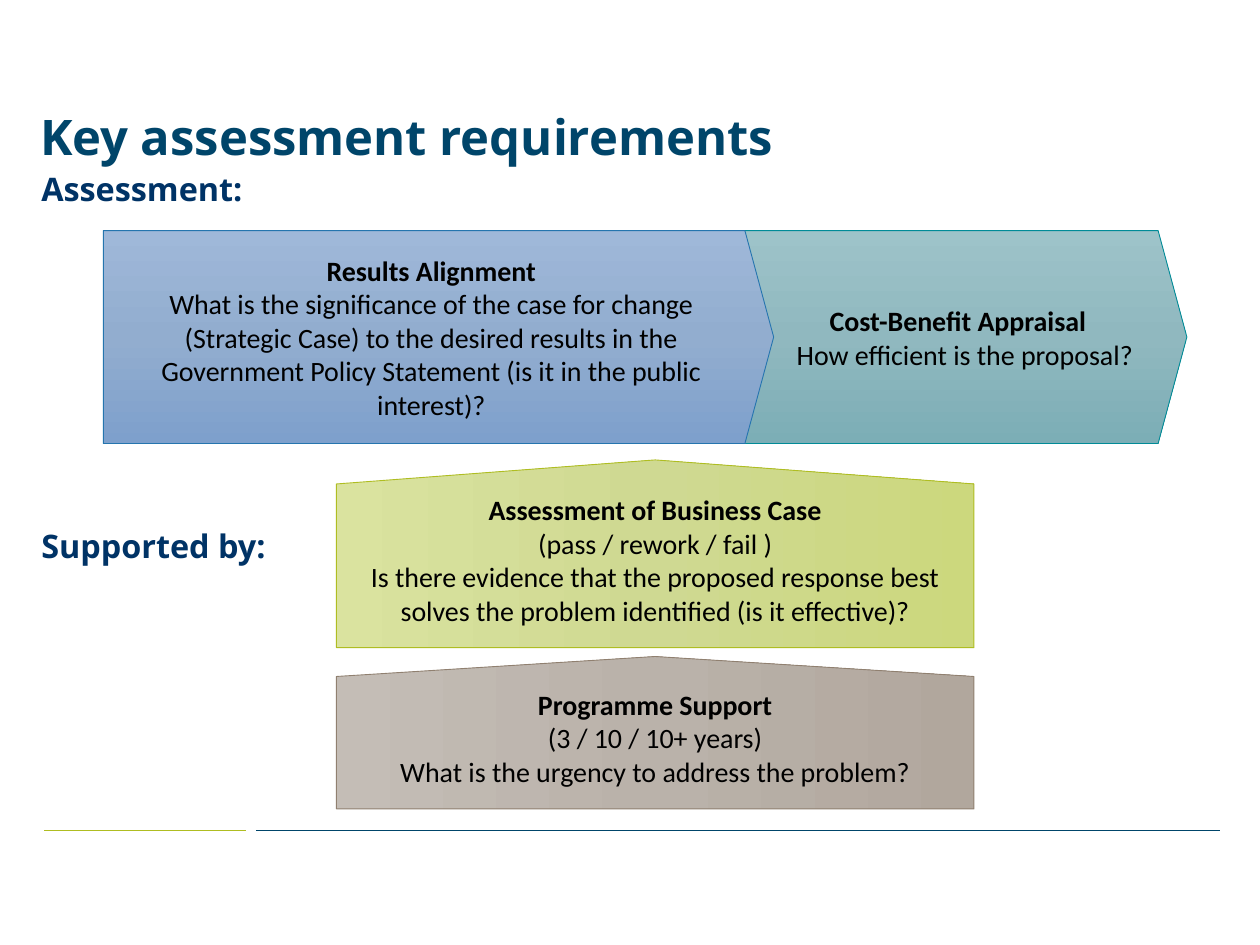
from lxml.etree import SubElement
from pptx import Presentation
from pptx.dml.color import RGBColor
from pptx.enum.shapes import MSO_CONNECTOR, MSO_SHAPE
from pptx.enum.text import MSO_ANCHOR, PP_ALIGN
from pptx.oxml.ns import qn
from pptx.util import Inches, Pt

COLORS = {
    "title": "00456A",
    "label": "003366",
    "body": "000000",
    "rule_green": "AFBD21",
    "teal_line": "008B97",
    "blue_line": "2575AE",
    "green_line": "AFBD22",
    "taupe_line": "908070",
}
GRADIENTS = {
    "teal": ("9DC3C9", "90B8BF", "7CAEB6"),
    "blue": ("9FB8D9", "92ADCF", "7EA0CC"),
    "green": ("DAE39F", "CFD992", "CCD87D"),
    "taupe": ("C4BDB6", "BAB2AA", "B1A79D"),
}


def rgb(name):
    return RGBColor.from_string(COLORS[name])


def format_font(font, name, size, color, bold):
    font.name = name
    font.size = Pt(size)
    font.color.rgb = rgb(color)
    font.bold = bold


def add_heading(slide, text, box, size, color, line_spacing, anchor):
    shape = slide.shapes.add_textbox(*map(Inches, box))
    text_frame = shape.text_frame
    text_frame.word_wrap = True
    text_frame.vertical_anchor = anchor
    text_frame.text = text
    paragraph = text_frame.paragraphs[0]
    paragraph.line_spacing = line_spacing
    format_font(paragraph.runs[0].font, "Open Sans", size, color, True)


def add_rule(slide, left, right, color):
    top = Inches(6.59)
    connector = slide.shapes.add_connector(
        MSO_CONNECTOR.STRAIGHT, Inches(left), top, Inches(right), top)
    connector.line.color.rgb = rgb(color)
    connector.line.width = Pt(0.75)
    SubElement(connector._element.spPr, qn("a:effectLst"))


def fill_gradient(shape, colors):
    shape.fill.gradient()
    shape.fill.gradient_angle = 270
    stops = shape._element.spPr.find(qn("a:gradFill")).find(qn("a:gsLst"))
    for stop in list(stops):
        stops.remove(stop)
    for position, color in zip((0, 50000, 100000), colors):
        stop = SubElement(stops, qn("a:gs"), pos=str(position))
        SubElement(stop, qn("a:srgbClr"), val=color)


def add_pentagon(slide, box, point, theme, lines, upward=False, margins=()):
    left, top, width, height = box
    if upward:
        left += (width - height) / 2
        top += (height - width) / 2
        width, height = height, width
    shape = slide.shapes.add_shape(
        MSO_SHAPE.PENTAGON, *map(Inches, (left, top, width, height)))
    shape.shadow.inherit = False
    shape.adjustments[0] = point
    fill_gradient(shape, GRADIENTS[theme])
    shape.line.color.rgb = rgb(f"{theme}_line")
    shape.line.width = Pt(0.5)
    text_frame = shape.text_frame
    text_frame.word_wrap = True
    text_frame.vertical_anchor = MSO_ANCHOR.MIDDLE
    if upward:
        shape.rotation = 270
        text_frame._txBody.bodyPr.set("vert", "vert")
    text_frame.text = "\n".join(lines)
    for index, paragraph in enumerate(text_frame.paragraphs):
        paragraph.alignment = PP_ALIGN.CENTER
        format_font(paragraph.runs[0].font, "Calibri", 16, "body", index == 0)
    for paragraph, margin in zip(text_frame.paragraphs, margins):
        paragraph._p.get_or_add_pPr().set("marL", str(Inches(margin)))


def main():
    presentation = Presentation()
    presentation.slide_width = Inches(10)
    presentation.slide_height = Inches(7.5)
    slide = presentation.slides.add_slide(presentation.slide_layouts[6])

    add_rule(slide, 0.35, 1.95, "rule_green")
    add_rule(slide, 2.03, 9.68, "title")
    add_heading(slide, "Key assessment requirements", (0.22, 0.68, 9.44, 0.69),
                28, "title", 0.9, MSO_ANCHOR.BOTTOM)
    for text, top in (("Assessment:", 1.38), ("Supported by:", 4.21)):
        add_heading(slide, text, (0.23, top, 2.4, 0.35),
                    18.5, "label", 0.7, MSO_ANCHOR.TOP)

    add_pentagon(slide, (5.71, 1.83, 3.71, 1.69), 0.135, "teal", (
        "Cost-Benefit Appraisal",
        "How efficient is the proposal?",
    ), margins=(0.19, 0.3))
    add_pentagon(slide, (0.82, 1.83, 5.32, 1.69), 0.135, "blue", (
        "Results Alignment",
        "What is the significance of the case for change (Strategic Case) "
        "to the desired results in the Government Policy Statement "
        "(is it in the public interest)?",
    ))
    add_pentagon(slide, (2.67, 3.65, 5.06, 1.49), 0.128, "green", (
        "Assessment of Business Case",
        "(pass / rework / fail )",
        "Is there evidence that the proposed response best solves "
        "the problem identified (is it effective)?",
    ), upward=True)
    add_pentagon(slide, (2.67, 5.21, 5.06, 1.21), 0.131, "taupe", (
        "Programme Support",
        "(3 / 10 / 10+ years)",
        "What is the urgency to address the problem?",
    ), upward=True)

    presentation.save("out.pptx")


if __name__ == "__main__":
    main()
